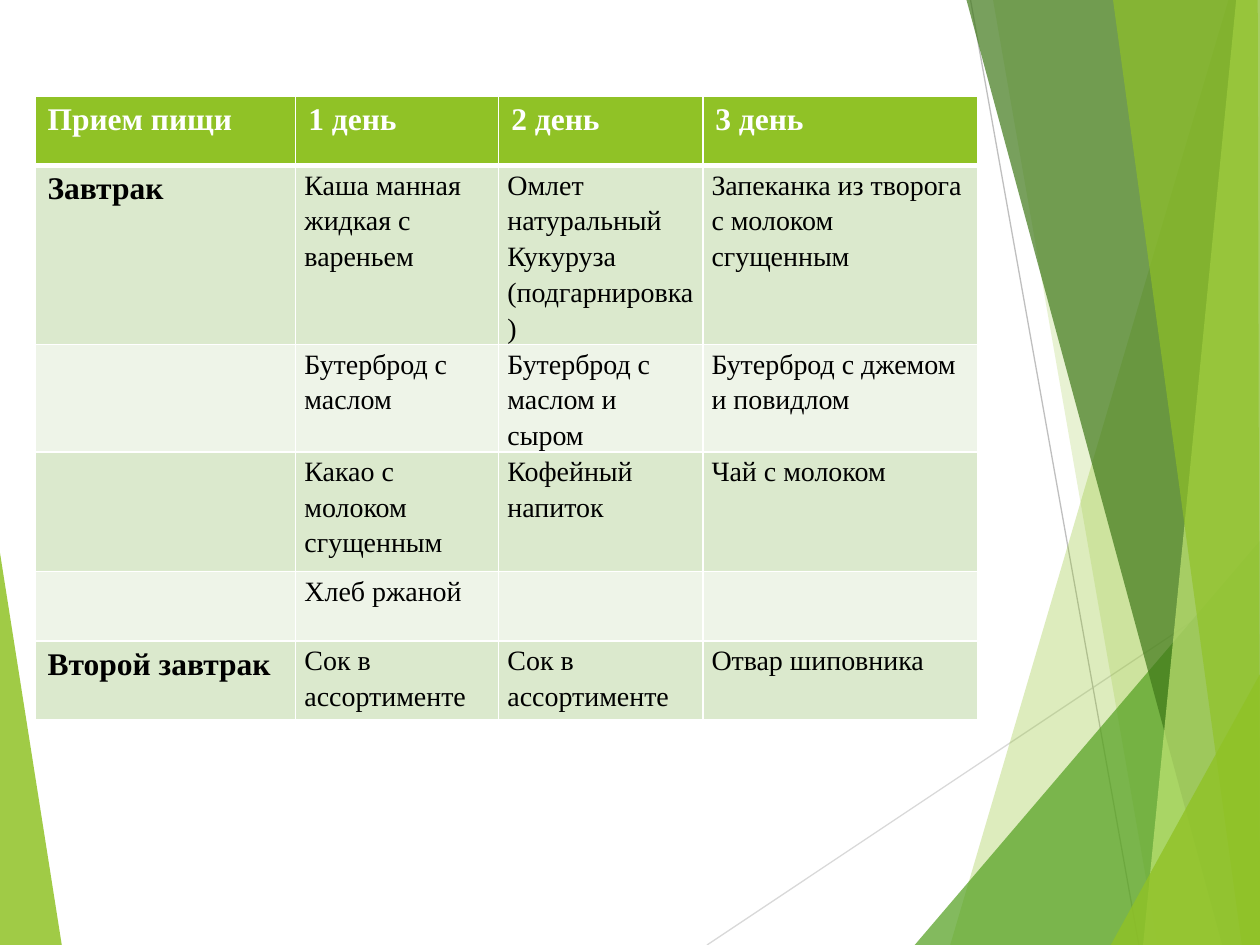
from dataclasses import dataclass

from lxml.etree import SubElement
from pptx import Presentation
from pptx.dml.color import RGBColor as Color
from pptx.enum.shapes import MSO_CONNECTOR as Connector
from pptx.oxml import parse_xml
from pptx.oxml.ns import nsdecls, qn
from pptx.util import Pt


@dataclass(frozen=True)
class Theme:
    """Colours, font and type sizes of the deck."""
    lime: str = "90C226"
    pale_lime: str = "C0E474"
    green: str = "54A021"
    dark_green: str = "3F7819"
    light_grey: str = "D9D9D9"
    grey: str = "BFBFBF"
    white: str = "FFFFFF"
    black: str = "000000"
    bands: tuple = ("DBE9CD", "EEF4E8")
    font: str = "Times New Roman"
    label_size: int = 18
    dish_size: int = 16


THEME = Theme()
WIDTH, HEIGHT = 720, 540

LEFT_FACET = (THEME.lime, 85, [(0, 316), (35.3, HEIGHT), (0, HEIGHT)])
RAYS = [
    (THEME.light_grey, (404, HEIGHT), (WIDTH, 329.3)),
    (THEME.grey, (554.6, 0), (650.8, HEIGHT)),
]
RIGHT_FACETS = [
    (THEME.lime, 30, [(702, 0), (543, HEIGHT), (WIDTH, HEIGHT), (WIDTH, 0)]),
    (THEME.lime, 20, [(567.5, 0), (661.5, HEIGHT), (WIDTH, HEIGHT), (WIDTH, 0)]),
    (THEME.green, 72, [(522.7, HEIGHT), (WIDTH, 309), (WIDTH, HEIGHT)]),
    (THEME.dark_green, 70, [(552.3, 0), (698.4, HEIGHT), (WIDTH, HEIGHT), (WIDTH, 0)]),
    (THEME.pale_lime, 70, [(706.4, 0), (653.2, HEIGHT), (WIDTH, HEIGHT), (WIDTH, 0)]),
    (THEME.lime, 65, [(636, 0), (709.6, HEIGHT), (WIDTH, HEIGHT), (718.7, 0)]),
    (THEME.lime, 80, [(634.7, HEIGHT), (WIDTH, 385.2), (WIDTH, HEIGHT)]),
]

COLUMN_WIDTHS = [149, 116, 116.6, 157]
ROW_HEIGHTS = [39.6, 90.7, 45.4, 68.4, 39.6, 45.4]
MENU = [
    ["Прием пищи", "1 день", "2 день", "3 день"],
    ["Завтрак", "Каша манная жидкая с вареньем",
     "Омлет натуральный\nКукуруза (подгарнировка)",
     "Запеканка из творога с молоком сгущенным"],
    ["", "Бутерброд с маслом", "Бутерброд с маслом и сыром",
     "Бутерброд с джемом и повидлом"],
    ["", "Какао с молоком сгущенным", "Кофейный напиток", "Чай с молоком"],
    ["", "Хлеб ржаной", "", ""],
    ["Второй завтрак", "Сок в ассортименте", "Сок в ассортименте",
     "Отвар шиповника"],
]


def add_facet(page, color, opacity, corners):
    """Draw a translucent polygon through the corners."""
    points = [(Pt(x), Pt(y)) for x, y in corners]
    builder = page.shapes.build_freeform(*points[0], scale=1.0)
    builder.add_line_segments(points[1:], close=True)
    facet = builder.convert_to_shape()
    facet.shadow.inherit = False
    facet.fill.solid()
    facet.fill.fore_color.rgb = Color.from_string(color)
    tint = facet._element.spPr.find(f".//{qn('a:srgbClr')}")
    SubElement(tint, qn("a:alpha")).set("val", str(opacity * 1000))
    facet.line.fill.background()


def add_ray(page, color, start, end):
    """Draw a thin straight line between two points."""
    ends = [Pt(value) for value in (*start, *end)]
    ray = page.shapes.add_connector(Connector.STRAIGHT, *ends)
    ray.line.color.rgb = Color.from_string(color)
    ray.line.width = Pt(0.75)
    SubElement(ray._element.spPr, qn("a:effectLst"))


def set_borders(cell, top, bottom):
    """Give a cell white borders with the given top and bottom widths."""
    properties = cell._tc.get_or_add_tcPr()
    sides = {"lnL": 1, "lnR": 1, "lnT": top, "lnB": bottom}
    for index, (side, width) in enumerate(sides.items()):
        properties.insert(index, parse_xml(
            f'<a:{side} {nsdecls("a")} w="{Pt(width)}"><a:solidFill>'
            f'<a:srgbClr val="{THEME.white}"/></a:solidFill></a:{side}>'))


def fill_cell(cell, text, row, column):
    """Write and style one cell according to its place in the menu."""
    is_header = row == 0
    is_label = is_header or column == 0
    band = THEME.lime if is_header else THEME.bands[(row - 1) % 2]
    cell.fill.solid()
    cell.fill.fore_color.rgb = Color.from_string(band)
    set_borders(cell, 3 if row == 1 else 1, 3 if is_header else 1)
    if not text:
        return
    cell.text = text
    if not is_label:
        cell.margin_left = cell.margin_right = Pt(5)
        cell.margin_top = cell.margin_bottom = Pt(0)
    for para in cell.text_frame.paragraphs:
        para.font.name = THEME.font
        para.font.size = Pt(THEME.label_size if is_label else THEME.dish_size)
        para.font.bold = is_label
        para.font.color.rgb = Color.from_string(
            THEME.white if is_header else THEME.black)
        if not is_label:
            para.line_spacing = 1.15


def add_menu(page, left, top):
    """Add the menu table."""
    frame = page.shapes.add_table(
        len(ROW_HEIGHTS), len(COLUMN_WIDTHS), Pt(left), Pt(top),
        Pt(sum(COLUMN_WIDTHS)), Pt(sum(ROW_HEIGHTS)))
    table = frame.table
    table.horz_banding = False
    for column, width in zip(table.columns, COLUMN_WIDTHS):
        column.width = Pt(width)
    for row, height in zip(table.rows, ROW_HEIGHTS):
        row.height = Pt(height)
    for row, texts in enumerate(MENU):
        for column, text in enumerate(texts):
            fill_cell(table.cell(row, column), text, row, column)


def main():
    """Build the menu slide and save the deck."""
    deck = Presentation()
    deck.slide_width, deck.slide_height = Pt(WIDTH), Pt(HEIGHT)
    page = deck.slides.add_slide(deck.slide_layouts[6])
    add_facet(page, *LEFT_FACET)
    for ray in RAYS:
        add_ray(page, *ray)
    for facet in RIGHT_FACETS:
        add_facet(page, *facet)
    add_menu(page, 20, 55)
    deck.save("out.pptx")


if __name__ == "__main__":
    main()
